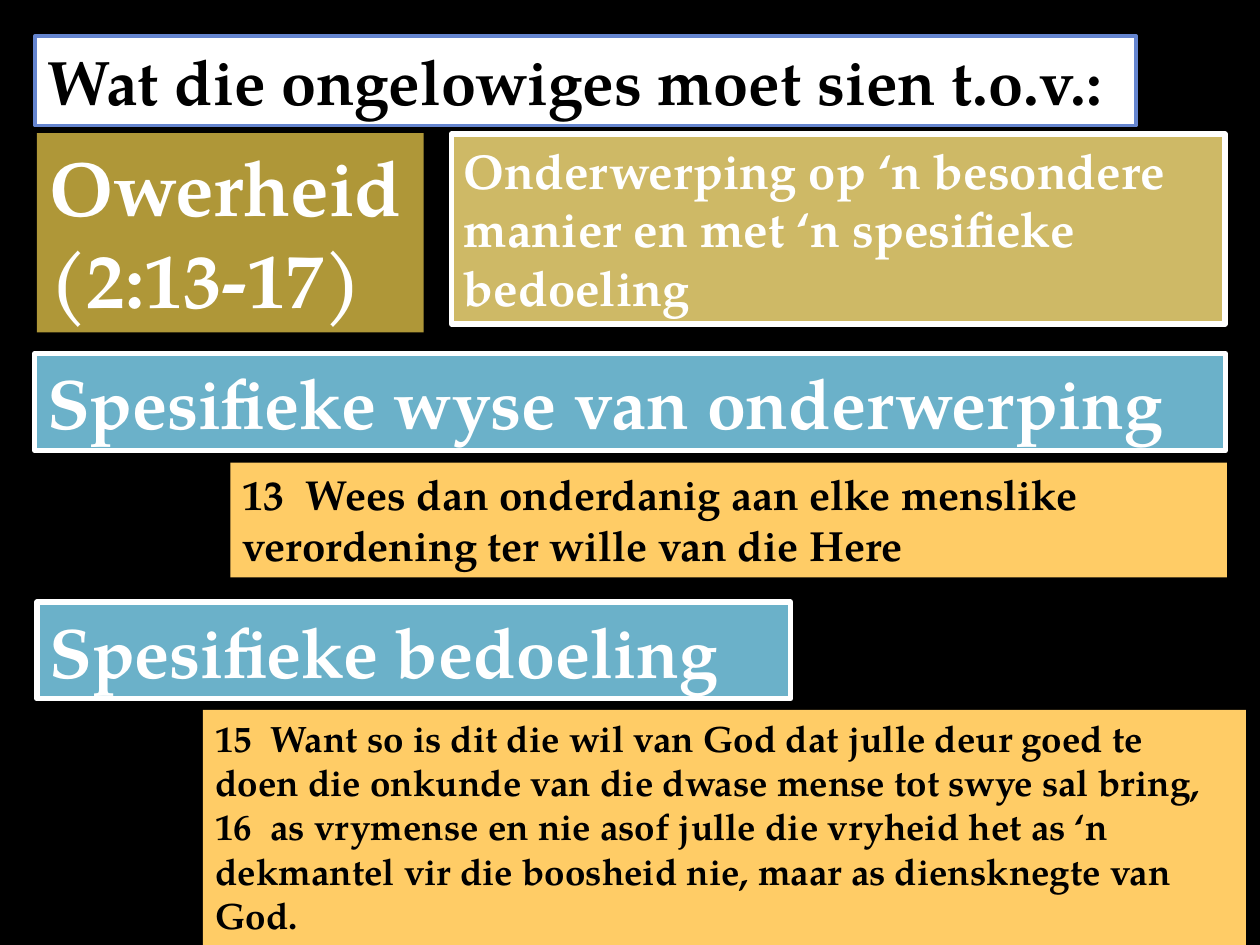
"""Build the slide on what unbelievers should see in regard to authority."""
import pptx
import pptx.util
import pptx.dml.color
import pptx.enum.shapes
import pptx.enum.text

Pt = pptx.util.Pt
RGBColor = pptx.dml.color.RGBColor

BLACK = RGBColor(0x00, 0x00, 0x00)
WHITE = RGBColor(0xFF, 0xFF, 0xFF)
BLUE = RGBColor(0x65, 0x85, 0xCF)
GOLD = RGBColor(0xAF, 0x97, 0x38)
SAND = RGBColor(0xCE, 0xB9, 0x66)
AQUA = RGBColor(0x6B, 0xB1, 0xC9)
AMBER = RGBColor(0xFF, 0xCC, 0x66)
FONT = "TeX Gyre Pagella"


def add_text(frame, lines, size, ink):
    for num, line in enumerate(lines):
        para = frame.add_paragraph() if num else frame.paragraphs[0]
        para.alignment = pptx.enum.text.PP_ALIGN.LEFT
        run = para.add_run()
        run.text = line
        run.font.name = FONT
        run.font.size = Pt(size)
        run.font.bold = True
        run.font.color.rgb = ink


def add_box(slide, area, fill, lines, size, ink=WHITE, edge=None, width=3, wrap=True):
    kind = pptx.enum.shapes.MSO_SHAPE.RECTANGLE
    box = slide.shapes.add_shape(kind, *[Pt(side) for side in area])
    box.shadow.inherit = False
    box.fill.solid()
    box.fill.fore_color.rgb = fill
    if edge is None:
        box.line.fill.background()
    else:
        box.line.color.rgb = edge
        box.line.width = Pt(width)
    frame = box.text_frame
    frame.word_wrap = wrap
    frame.auto_size = pptx.enum.text.MSO_AUTO_SIZE.SHAPE_TO_FIT_TEXT
    frame.vertical_anchor = pptx.enum.text.MSO_ANCHOR.TOP
    add_text(frame, lines, size, ink)


def add_head(slide, area, text):
    add_box(slide, area, AQUA, [text], 40, edge=WHITE)


def add_verse(slide, area, text, size):
    add_box(slide, area, AMBER, [text], size, ink=BLACK)


def main():
    deck = pptx.Presentation()
    deck.slide_width, deck.slide_height = Pt(720), Pt(540)
    slide = deck.slides.add_slide(deck.slide_layouts[6])
    slide.background.fill.solid()
    slide.background.fill.fore_color.rgb = BLACK

    add_box(slide, (19.9, 20.6, 629.3, 51.1), WHITE,
            ["Wat die ongelowiges moet sien t.o.v.:"], 36,
            ink=BLACK, edge=BLUE, width=2, wrap=False)
    add_box(slide, (21.1, 76.1, 221, 113.8), GOLD, ["Owerheid", "(2:13-17)"], 44)
    add_box(slide, (258, 76.5, 442.1, 108.7), SAND,
            ["Onderwerping op ‘n besondere manier en met ‘n spesifieke bedoeling"],
            28, edge=WHITE)

    add_head(slide, (19.9, 202.1, 680.4, 55.4), "Spesifieke wyse van onderwerping")
    add_verse(slide, (131.6, 264.4, 569.5, 65.5),
              "13  Wees dan onderdanig aan elke menslike verordening "
              "ter wille van die Here", 24)
    add_head(slide, (21.1, 344, 430.6, 55.4), "Spesifieke bedoeling")
    add_verse(slide, (116, 405.6, 596, 134.6),
              "15  Want so is dit die wil van God dat julle deur goed te doen "
              "die onkunde van die dwase mense tot swye sal bring, "
              "16  as vrymense en nie asof julle die vryheid het as ‘n dekmantel "
              "vir die boosheid nie, maar as diensknegte van God.", 21)
    deck.save("out.pptx")


if __name__ == "__main__":
    main()
